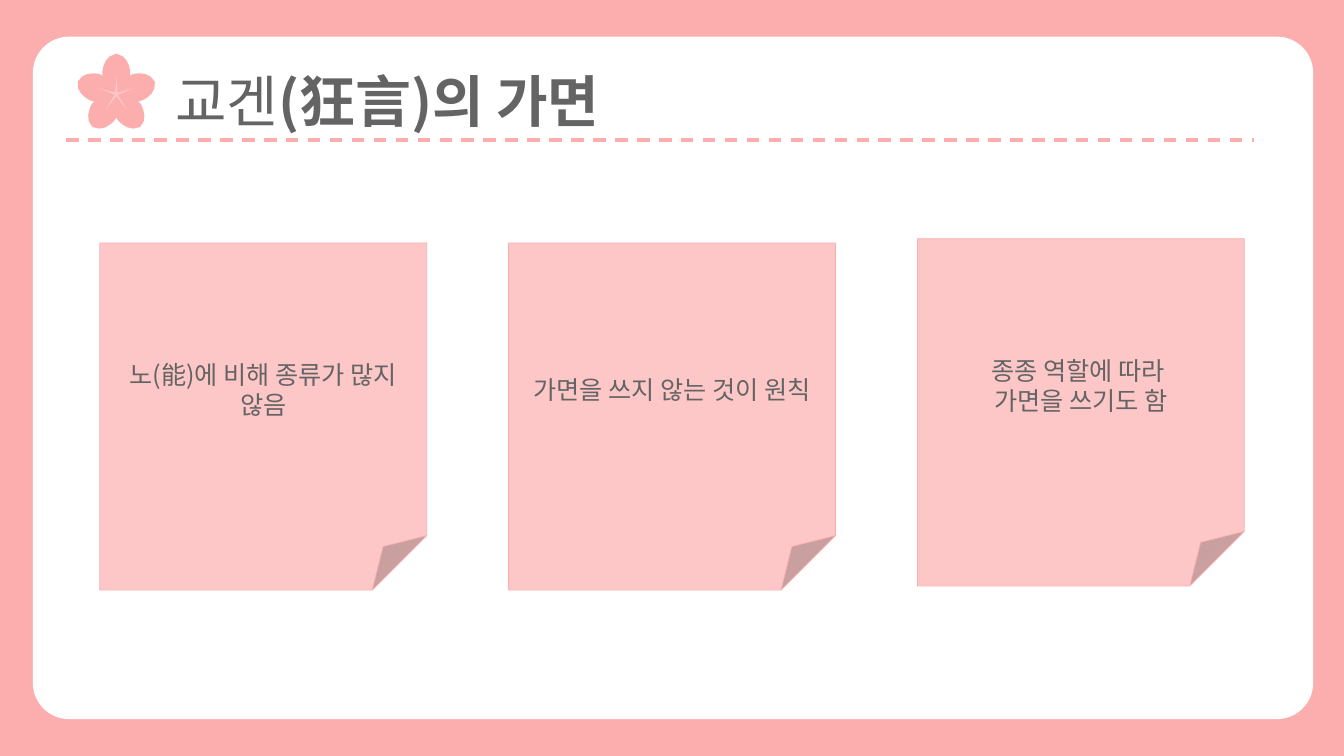
from math import cos, pi, sin

from lxml import etree
from pptx import Presentation
from pptx.dml.color import RGBColor
from pptx.enum import dml, shapes, text
from pptx.oxml.ns import qn
from pptx.util import Pt

FONT = "Noto Sans CJK KR"
INK = {"pink": "FCAEAE", "pale": "FDC7C7", "white": "FFFFFF", "gray": "646464"}
NOTES = [
    (173.5, ["노(能)에 비해 종류가 많지 않음"]),
    (173.5, ["가면을 쓰지 않는 것이 원칙"]),
    (170.5, ["종종 역할에 따라 ", "가면을 쓰기도 함"]),
]
# Right half of the upright petal, from its tip to the notch, around the centre.
PETAL = [(0, -29), (4.7, -27), (7.4, -24), (9, -20.5), (9.9, -17), (9.9, -14), (9.3, -12.9)]


def color(name):
    return RGBColor.from_string(INK[name])


def write(par, words, size=18, bold=False, ink="gray"):
    run = par.add_run()
    run.text = words
    font = run.font
    font.size, font.bold, font.name = Pt(size), bold, FONT
    font.color.rgb = color(ink)
    etree.SubElement(font._element, qn("a:ea"), typeface=FONT)


class Page:
    def __init__(self, slide):
        self.slide = slide
        self.shapes = slide.shapes

    def paint(self, shape, fill, line=None):
        shape.shadow.inherit = False
        shape.fill.solid()
        shape.fill.fore_color.rgb = color(fill)
        if line:
            shape.line.color.rgb = color(line)
            shape.line.width = Pt(0.5)
        else:
            shape.line.fill.background()
        return shape

    def back(self, fill):
        self.slide.background.fill.solid()
        self.slide.background.fill.fore_color.rgb = color(fill)

    def shape(self, kind, box, fill, line=None):
        return self.paint(self.shapes.add_shape(kind, *map(Pt, box)), fill, line)

    def title(self, box, runs):
        title = self.shapes.title
        self.shapes.element.append(title.element)  # to the front
        title.left, title.top, title.width, title.height = map(Pt, box)
        frame = title.text_frame
        frame.auto_size = text.MSO_AUTO_SIZE.NONE
        frame.vertical_anchor = text.MSO_ANCHOR.TOP
        par = frame.paragraphs[0]
        par.alignment, par.line_spacing = text.PP_ALIGN.LEFT, 1.0
        for words, bold in runs:
            write(par, words, size=40, bold=bold)

    def rule(self, left, right, y):
        line = self.shapes.add_connector(
            shapes.MSO_CONNECTOR.STRAIGHT, Pt(left), Pt(y), Pt(right), Pt(y))
        line.line.color.rgb = color("pink")
        line.line.width = Pt(2.25)
        line.line.dash_style = dml.MSO_LINE.DASH
        etree.SubElement(line.element.spPr, qn("a:effectLst"))

    def flower(self, x, y):
        """Turn one petal five times around (x, y) and lay a thin star on it."""
        petal = [(-a, b) for a, b in PETAL[:0:-1]] + PETAL
        ring = []
        for i in range(5):
            c, s = cos(i * 2 * pi / 5), sin(i * 2 * pi / 5)
            ring += [(x + a * c - b * s, y + a * s + b * c) for a, b in petal]
        ring = [(Pt(a), Pt(b)) for a, b in ring]
        form = self.shapes.build_freeform(*ring[0])
        form.add_line_segments(ring[1:])
        self.paint(form.convert_to_shape(), "pink")
        star = self.shape(shapes.MSO_SHAPE.STAR_5_POINT, (x - 12, y - 13.3, 24, 24), "pale")
        star.adjustments[0] = 0.051

    def note(self, box, lines):
        note = self.shape(shapes.MSO_SHAPE.FOLDED_CORNER, box, "pale", "pink")
        frame = note.text_frame
        frame.word_wrap = True
        frame.vertical_anchor = text.MSO_ANCHOR.MIDDLE
        for i, words in enumerate(lines):
            par = frame.add_paragraph() if i else frame.paragraphs[0]
            par.alignment = text.PP_ALIGN.CENTER
            write(par, words)


def main():
    deck = Presentation()
    deck.slide_width, deck.slide_height = Pt(960), Pt(540)
    page = Page(deck.slides.add_slide(deck.slide_layouts[5]))

    page.back("pink")
    panel = page.shape(
        shapes.MSO_SHAPE.ROUNDED_RECTANGLE, (23.5, 26.2, 914.5, 487.5), "white")
    panel.adjustments[0] = 0.053
    page.title((118, 44, 426, 55.5), [("교겐", False), ("(狂言)의 가면", True)])
    page.rule(47.5, 895.5, 100)
    page.flower(83.1, 67.3)
    for i, (top, lines) in enumerate(NOTES):
        page.note((71.3 + 292 * i, top, 233.5, 248), lines)

    deck.save("out.pptx")


if __name__ == "__main__":
    main()
